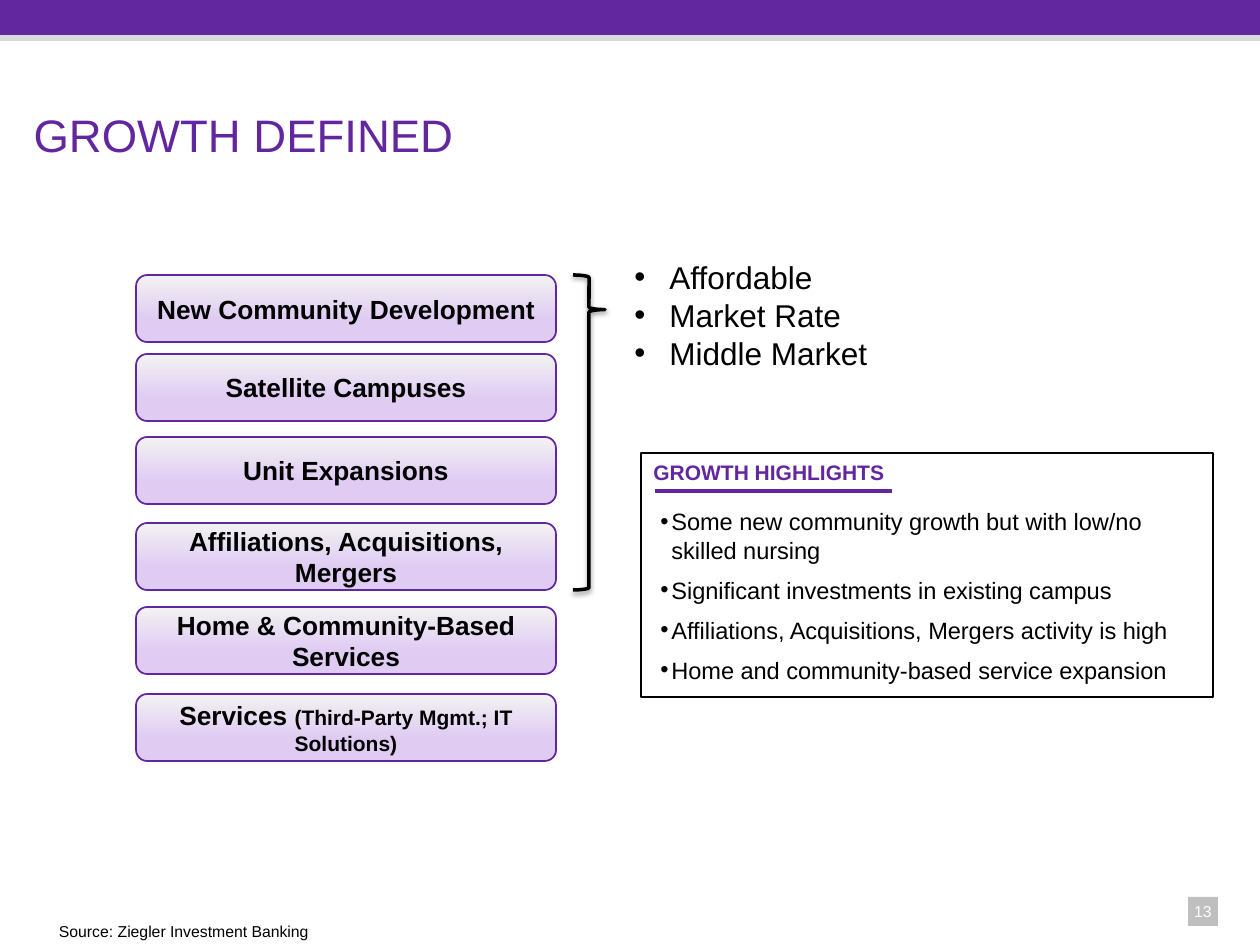
"""Build the Growth Defined slide."""
from dataclasses import dataclass
from typing import NamedTuple

from lxml import etree
from pptx import Presentation
from pptx import util as u
from pptx.dml.color import RGBColor
from pptx.enum import shapes, text
from pptx.oxml.ns import qn

SCALE = 914400 / 126


@dataclass(frozen=True)
class Theme:
    font: str = "Arial"
    purple: str = "62269E"
    lilac: str = "E0CCF3"
    pale: str = "F2F2F2"
    rule: str = "D9D9D9"
    grey: str = "BFBFBF"
    black: str = "000000"
    white: str = "FFFFFF"
    title: float = 26
    list: float = 18
    pill: float = 15
    body: float = 13.5
    head: float = 12
    small: float = 9


class Box(NamedTuple):
    left: int
    top: int
    width: int
    height: int


class Pill(NamedTuple):
    top: int
    label: str
    note: str = ""


THEME = Theme()
KIND = shapes.MSO_SHAPE
ALIGN = text.PP_ALIGN
ANCHOR = text.MSO_ANCHOR

BANDS = [
    (Box(1188, 897, 30, 29), THEME.grey),
    (Box(0, 0, 1260, 41), THEME.purple),
    (Box(0, 35, 1260, 6), THEME.rule),
]
PILLS = [
    Pill(275, "New Community Development"),
    Pill(354, "Satellite Campuses"),
    Pill(437, "Unit Expansions"),
    Pill(523, "Affiliations, Acquisitions, Mergers"),
    Pill(607, "Home & Community-Based Services"),
    Pill(694, "Services ", "(Third-Party Mgmt.; IT Solutions)"),
]
MARKETS = ["Affordable", "Market Rate", "Middle Market"]
POINTS = [
    "Some new community growth but with low/no skilled nursing",
    "Significant investments in existing campus",
    "Affiliations, Acquisitions, Mergers activity is high",
    "Home and community-based service expansion",
]


def px(size: int) -> int:
    """Turn pixels into EMU."""
    return round(size * SCALE)


def rgb(code: str) -> RGBColor:
    """Read a hex colour."""
    return RGBColor.from_string(code)


def style(par, size: float, color: str = THEME.black, bold: bool = False, align=ALIGN.LEFT) -> None:
    """Set the font and alignment of a paragraph."""
    par.alignment = align
    font = par.font
    font.name, font.size, font.bold = THEME.font, u.Pt(size), bold
    font.color.rgb = rgb(color)


def bullet(par, left: int, hang: int) -> None:
    """Give a paragraph a hanging bullet."""
    props = par._p.get_or_add_pPr()
    props.set("marL", str(px(left)))
    props.set("indent", str(-px(hang)))
    etree.SubElement(props, qn("a:buFont")).set("typeface", THEME.font)
    etree.SubElement(props, qn("a:buChar")).set("char", "•")


def shape(slide, kind, box: Box, fill: str = "", line: str = "", width: float = 1):
    """Add a plain preset shape."""
    item = slide.shapes.add_shape(kind, *map(px, box))
    item.shadow.inherit = False
    if fill:
        item.fill.solid()
        item.fill.fore_color.rgb = rgb(fill)
    else:
        item.fill.background()
    if line:
        item.line.color.rgb = rgb(line)
        item.line.width = u.Pt(width)
    else:
        item.line.fill.background()
    return item


def label(slide, box: Box, words: str = "", wrap: bool = True, **look):
    """Add a text box and return its frame."""
    frame = slide.shapes.add_textbox(*map(px, box)).text_frame
    frame.word_wrap = wrap
    if words:
        frame.text = words
        style(frame.paragraphs[0], **look)
    return frame


def pill(slide, data: Pill) -> None:
    """Draw one growth type."""
    item = shape(slide, KIND.ROUNDED_RECTANGLE, Box(136, data.top, 420, 67), line=THEME.purple)
    item.fill.gradient()
    item.fill.gradient_angle = 270
    stops = zip(item.fill.gradient_stops, (0, 0.66), (THEME.pale, THEME.lilac))
    for stop, place, color in stops:
        stop.position = place
        stop.color.rgb = rgb(color)
    frame = item.text_frame
    frame.word_wrap = True
    frame.vertical_anchor = ANCHOR.MIDDLE
    frame.margin_left = frame.margin_right = frame.margin_top = frame.margin_bottom = 0
    par = frame.paragraphs[0]
    par.add_run().text = data.label
    if data.note:
        run = par.add_run()
        run.text = data.note
        run.font.size = u.Pt(THEME.head)
    style(par, THEME.pill, bold=True, align=ALIGN.CENTER)


def brace(slide) -> None:
    """Draw the brace with its soft shadow."""
    item = shape(slide, KIND.RIGHT_BRACE, Box(573, 275, 32, 315), line=THEME.black, width=2)
    item.adjustments[0], item.adjustments[1] = 0.08, 0.11
    glow = etree.SubElement(
        item._element.spPr.find(qn("a:effectLst")), qn("a:outerShdw"),
        blurRad=str(u.Pt(3.1)), dist=str(u.Pt(1.6)), dir="5400000", rotWithShape="0")
    color = etree.SubElement(glow, qn("a:srgbClr"), val=THEME.black)
    etree.SubElement(color, qn("a:alpha"), val="38000")


def markets(slide) -> None:
    """List the markets beside the brace."""
    frame = label(slide, Box(622, 252, 261, 127), wrap=False)
    for pos, words in enumerate(MARKETS):
        par = frame.add_paragraph() if pos else frame.paragraphs[0]
        par.text = words
        bullet(par, 35, 35)
        style(par, THEME.list)


def panel(slide) -> None:
    """Draw the framed highlights."""
    item = shape(slide, KIND.RECTANGLE, Box(641, 453, 572, 244), line=THEME.black, width=0.75)
    frame = item.text_frame
    frame.word_wrap = True
    frame.vertical_anchor = ANCHOR.TOP
    frame.text = "GROWTH HIGHLIGHTS"
    style(frame.paragraphs[0], THEME.head, THEME.purple, True)
    for pos, words in enumerate(POINTS):
        par = frame.add_paragraph()
        par.text = words
        bullet(par, 18, 11)
        par.space_before = u.Pt(4.5 if pos else 13)
        par.space_after = u.Pt(2.2)
        style(par, THEME.body)
    line = slide.shapes.add_connector(shapes.MSO_CONNECTOR.STRAIGHT, *map(px, (655, 491, 892, 491)))
    line.line.color.rgb = rgb(THEME.purple)
    line.line.width = u.Pt(2.25)
    etree.SubElement(line._element.spPr, qn("a:effectLst"))


def title(slide) -> None:
    """Place and format the title."""
    item = slide.shapes.title
    item.left, item.top, item.width, item.height = map(px, (21, 52, 1218, 116))
    item.text_frame.text = "GROWTH DEFINED"
    item.text_frame.vertical_anchor = ANCHOR.BOTTOM
    style(item.text_frame.paragraphs[0], THEME.title, THEME.purple)


def main() -> None:
    """Build and save the deck."""
    deck = Presentation()
    deck.slide_width, deck.slide_height = px(1260), px(945)
    slide = deck.slides.add_slide(deck.slide_layouts[5])
    for box, color in BANDS:
        shape(slide, KIND.RECTANGLE, box, color)
    label(slide, Box(1145, 896, 116, 32), "13", size=THEME.small, color=THEME.white, align=ALIGN.CENTER)
    title(slide)
    for data in PILLS:
        pill(slide, data)
    brace(slide)
    markets(slide)
    panel(slide)
    frame = label(slide, Box(50, 917, 370, 28), "Source: Ziegler Investment Banking", size=THEME.small)
    frame.margin_left = frame.margin_right = px(9)
    frame.margin_top = frame.margin_bottom = px(5)
    deck.save("out.pptx")


if __name__ == "__main__":
    main()
